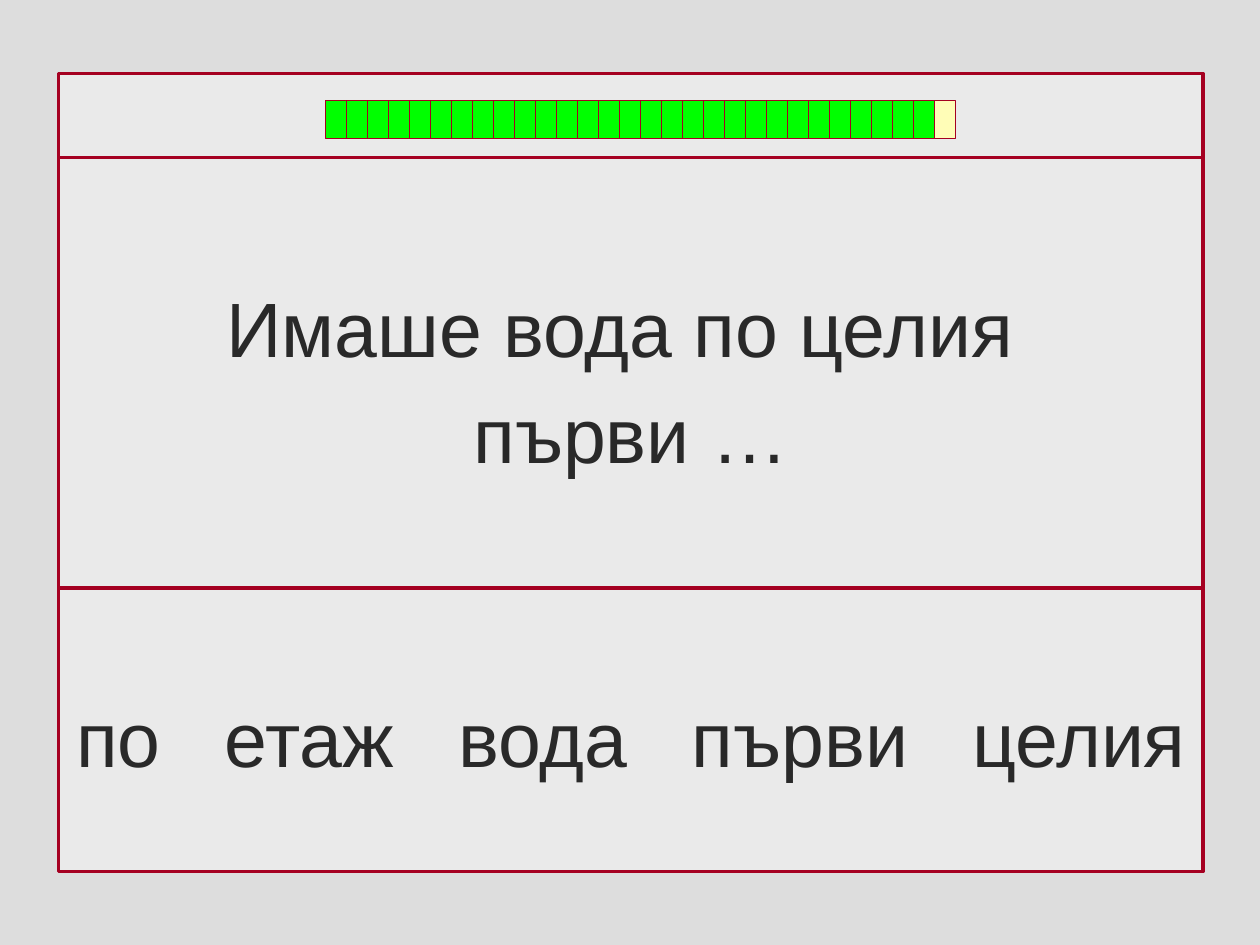
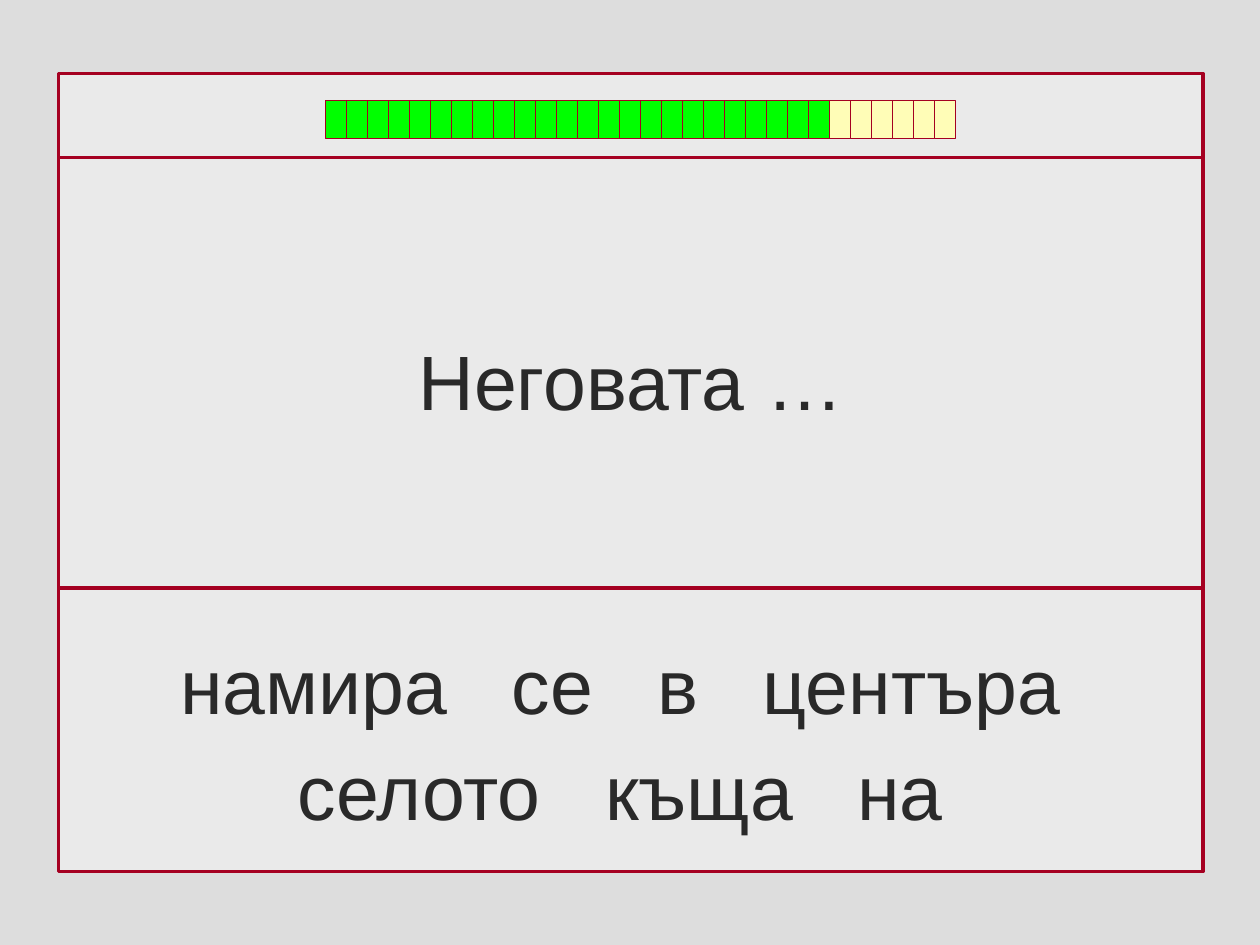
from pptx import Presentation
from pptx.dml.color import RGBColor
from pptx.enum.shapes import MSO_SHAPE as SHAPE
from pptx.enum.text import MSO_ANCHOR as ANCHOR, PP_ALIGN as ALIGN
from pptx.util import Pt

PX = 7620  # EMU per px, 120 px to the inch

BACKGROUND = RGBColor(0xDD, 0xDD, 0xDD)
PANEL = RGBColor(0xEA, 0xEA, 0xEA)
BORDER = RGBColor(0xA5, 0x00, 0x21)
INK = RGBColor(0x29, 0x29, 0x29)
DONE = RGBColor(0x00, 0xFF, 0x00)
TO_DO = RGBColor(0xFF, 0xFD, 0xB7)

FONT, SIZE = "Arial", 44
SPACE = 12.23  # width in points of one space at this size
WORD_GAP = 3   # spaces between the words to choose from

PANEL_X, PANEL_W = 56, 1090
STEPS, STEP_X, STEP_Y, STEP_W, STEP_H = 30, 310, 96, 20, 36


class Exercise:
    """Style of the exercise and the slide being filled."""

    def __init__(self, prs):
        self.prs = prs
        self.s = None

    def new_slide(self):
        self.s = self.prs.slides.add_slide(self.prs.slide_layouts[6])
        fill = self.s.background.fill
        fill.solid()
        fill.fore_color.rgb = BACKGROUND

    def box(self, x, y, w, h, color, line_width):
        sp = self.s.shapes.add_shape(SHAPE.RECTANGLE, x * PX, y * PX, w * PX, h * PX)
        sp.shadow.inherit = False
        sp.fill.solid()
        sp.fill.fore_color.rgb = color
        sp.line.color.rgb = BORDER
        sp.line.width = Pt(line_width)
        return sp

    def space(self, p, widths):
        """Add one space, tracked out to the given number of space widths."""
        r = p.add_run()
        r.text = " "
        r._r.get_or_add_rPr().set("spc", str(round((widths - 1) * SPACE * 100)))

    def panel(self, y, h, lines=(), gap=1):
        """Framed panel; each line is its words and the space after them."""
        tf = self.box(PANEL_X, y, PANEL_W, h, PANEL, 2).text_frame
        tf.word_wrap = False
        tf.vertical_anchor = ANCHOR.MIDDLE
        for i, (text, trailing) in enumerate(lines):
            p = tf.add_paragraph() if i else tf.paragraphs[0]
            p.alignment = ALIGN.CENTER
            p.line_spacing = 1.15
            for j, part in enumerate(text.split() if gap > 1 else [text]):
                if j:
                    self.space(p, gap)
                p.add_run().text = part
            if trailing:
                self.space(p, trailing)
            p.font.name = FONT
            p.font.size = Pt(SIZE)
            p.font.color.rgb = INK

    def progress(self, done):
        for i in range(STEPS):
            self.box(STEP_X + i * STEP_W, STEP_Y, STEP_W, STEP_H,
                     DONE if i < done else TO_DO, 0.75)

    def add(self, sentence, choices, done):
        self.new_slide()
        self.panel(150, 410, sentence)
        self.panel(70, 80)
        self.panel(560, 270, choices, WORD_GAP)
        self.progress(done)


def main():
    prs = Presentation()
    prs.slide_width, prs.slide_height = 1200 * PX, 900 * PX
    exercise = Exercise(prs)

    # Slide 1: the first floor
    exercise.add(
        sentence=[("Имаше вода по целия", 1), ("първи …", 0)],
        choices=[("по етаж вода първи целия", 0)],
        done=29)

    # Slide 2: the house in the village
    exercise.add(
        sentence=[("Неговата …", 0)],
        choices=[("намира се в центъра", 1), ("селото къща на", 4)],
        done=24)

    prs.save("out.pptx")


if __name__ == "__main__":
    main()
